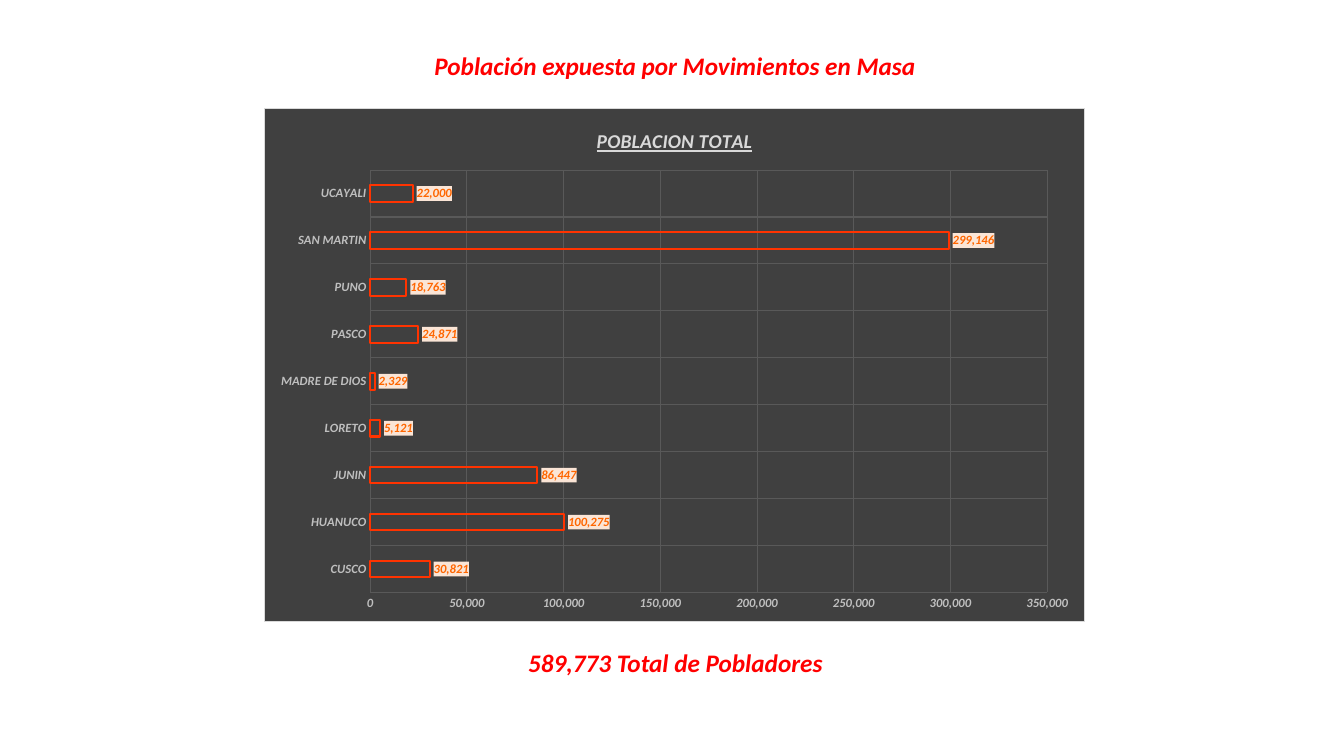
"""Build the slide on population exposed to mass movements."""
import pptx
import pptx.chart.data
import pptx.dml.color
import pptx.enum.chart
import pptx.enum.text
import pptx.oxml
import pptx.oxml.ns
import pptx.util

Inches, Pt = pptx.util.Inches, pptx.util.Pt

CAPTIONS = [
    ("Población expuesta por Movimientos en Masa", (4.18, 0.45, 5.03, 0.4), False),
    ("589,773 Total de Pobladores", (5.03, 6.37, 3.34, 0.4), True),
]
CHART_TITLE = "POBLACION TOTAL"
CHART_BOX = (2.62, 1.07, 8.14, 5.1)
POPULATION = {
    "CUSCO": 30821,
    "HUANUCO": 100275,
    "JUNIN": 86447,
    "LORETO": 5121,
    "MADRE DE DIOS": 2329,
    "PASCO": 24871,
    "PUNO": 18763,
    "SAN MARTIN": 299146,
    "UCAYALI": 22000,
}
NUMBER_FORMAT = "#,##0"


def color(hex_code):
    return pptx.dml.color.RGBColor.from_string(hex_code)


def style_font(font, size, hex_code):
    font.name = "Calibri"
    font.size = Pt(size)
    font.bold = font.italic = True
    font.color.rgb = color(hex_code)


def add_background(parent, fill, border=None):
    outline = (
        f'<a:ln w="9525"><a:solidFill><a:srgbClr val="{border}"/></a:solidFill></a:ln>'
        if border else "<a:ln><a:noFill/></a:ln>"
    )
    background = pptx.oxml.parse_xml(
        f'<c:spPr {pptx.oxml.ns.nsdecls("c", "a")}><a:solidFill>'
        f'<a:srgbClr val="{fill}"/></a:solidFill>{outline}</c:spPr>'
    )
    parent.find(pptx.oxml.ns.qn("c:txPr")).addprevious(background)


def add_caption(slide, text, box, wrap):
    frame = slide.shapes.add_textbox(*map(Inches, box)).text_frame
    frame.word_wrap = wrap
    frame.auto_size = pptx.enum.text.MSO_AUTO_SIZE.SHAPE_TO_FIT_TEXT
    paragraph = frame.paragraphs[0]
    paragraph.alignment = pptx.enum.text.PP_ALIGN.CENTER
    run = paragraph.add_run()
    run.text = text
    style_font(run.font, 18, "FF0000")


def style_axis(axis):
    axis.major_tick_mark = axis.minor_tick_mark = pptx.enum.chart.XL_TICK_MARK.NONE
    axis.format.line.fill.background()
    axis.has_major_gridlines = True
    gridline = axis.major_gridlines.format.line
    gridline.color.rgb = color("595959")
    gridline.width = Pt(0.75)
    style_font(axis.tick_labels.font, 9, "BFBFBF")


def add_population_chart(slide):
    data = pptx.chart.data.CategoryChartData(number_format=NUMBER_FORMAT)
    data.categories = list(POPULATION)
    data.add_series(CHART_TITLE, list(POPULATION.values()))
    chart = slide.shapes.add_chart(
        pptx.enum.chart.XL_CHART_TYPE.BAR_CLUSTERED, *map(Inches, CHART_BOX), data
    ).chart
    chart.has_legend = False
    chart.font.name = "Calibri"
    chart.font.size = Pt(10)
    add_background(chart.element, "404040", "D9D9D9")

    chart.has_title = True
    chart.chart_title.include_in_layout = False
    title = chart.chart_title.text_frame.paragraphs[0].add_run()
    title.text = CHART_TITLE
    style_font(title.font, 14, "D9D9D9")
    title.font.underline = True

    for axis in (chart.category_axis, chart.value_axis):
        style_axis(axis)
    chart.value_axis.minimum_scale = 0
    chart.value_axis.maximum_scale = 350000
    chart.value_axis.major_unit = 50000
    chart.value_axis.tick_labels.number_format = NUMBER_FORMAT
    chart.value_axis.tick_labels.number_format_is_linked = False

    plot = chart.plots[0]
    plot.gap_width = 182
    plot.overlap = -50
    plot.vary_by_categories = False
    bars = plot.series[0]
    bars.format.fill.background()
    bars.format.line.color.rgb = color("FF3300")
    bars.format.line.width = Pt(1.5)

    labels = bars.data_labels
    labels.show_value = True
    labels.position = pptx.enum.chart.XL_LABEL_POSITION.OUTSIDE_END
    labels.number_format = NUMBER_FORMAT
    labels.number_format_is_linked = False
    style_font(labels.font, 9, "FF6600")
    add_background(bars._element.find(pptx.oxml.ns.qn("c:dLbls")), "FBE5D6")


def main():
    deck = pptx.Presentation()
    deck.slide_width, deck.slide_height = Inches(13.33), Inches(7.5)
    slide = deck.slides.add_slide(deck.slide_layouts[6])
    for text, box, wrap in CAPTIONS:
        add_caption(slide, text, box, wrap)
    add_population_chart(slide)
    deck.save("out.pptx")


if __name__ == "__main__":
    main()
